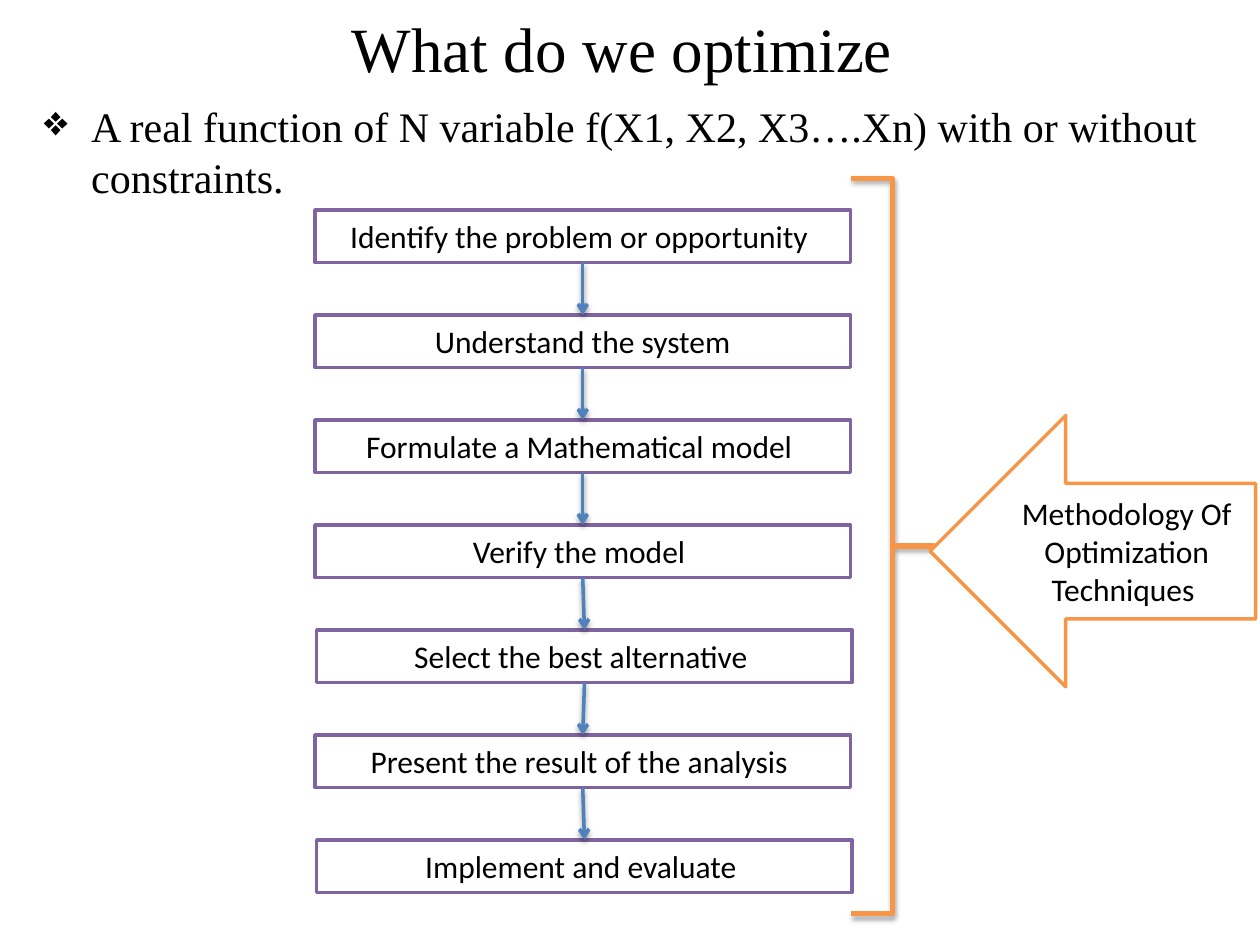
from dataclasses import dataclass

import lxml.etree
import pptx
import pptx.dml.color
import pptx.enum.shapes
import pptx.enum.text
import pptx.oxml.ns
import pptx.util

Pt = pptx.util.Pt
qn = pptx.oxml.ns.qn
SHAPE = pptx.enum.shapes.MSO_SHAPE
ALIGN = pptx.enum.text.PP_ALIGN
ANCHOR = pptx.enum.text.MSO_ANCHOR


@dataclass(frozen=True)
class Theme:
    text: str = "000000"
    surface: str = "FFFFFF"
    step: str = "8064A2"
    flow: str = "4F81BD"
    method: str = "F79646"
    heading_font: str = "Times New Roman"
    step_font: str = "Calibri"
    title_size: int = 36
    body_size: int = 24
    step_size: int = 18


THEME = Theme()

STEPS = [
    ("Identify the problem or opportunity ", 180),
    ("Understand the system", 180),
    ("Formulate a Mathematical model ", 180),
    ("Verify the model ", 180),
    ("Select the best alternative ", 181),
    ("Present the result of the analysis ", 180),
    ("Implement and evaluate ", 181),
]
STEP_TOP, STEP_PITCH, STEP_WIDTH, STEP_HEIGHT = 120, 60, 306, 30


def color(value):
    return pptx.dml.color.RGBColor.from_string(value)


def write_text(shape, text, *, font, size, align=ALIGN.CENTER, anchor=ANCHOR.MIDDLE):
    frame = shape.text_frame
    frame.word_wrap = True
    frame.vertical_anchor = anchor
    paragraph = frame.paragraphs[0]
    paragraph.alignment = align
    run = paragraph.add_run()
    run.text = text
    run.font.name = font
    run.font.size = Pt(size)
    run.font.color.rgb = color(THEME.text)
    return paragraph


def add_bullet(paragraph, character, indent):
    properties = paragraph._p.get_or_add_pPr()
    properties.set("marL", str(Pt(indent)))
    properties.set("indent", str(-Pt(indent)))
    lxml.etree.SubElement(properties, qn("a:buChar"), char=character)


def add_shadow(shape, opacity, distance):
    properties = shape.element.spPr
    effects = properties.find(qn("a:effectLst"))
    if effects is None:
        effects = lxml.etree.SubElement(properties, qn("a:effectLst"))
    shadow = lxml.etree.SubElement(
        effects, qn("a:outerShdw"), blurRad=str(Pt(3.1)), dist=str(Pt(distance)),
        dir="5400000", rotWithShape="0")
    tint = lxml.etree.SubElement(shadow, qn("a:srgbClr"), val=THEME.text)
    lxml.etree.SubElement(tint, qn("a:alpha"), val=str(opacity * 1000))


def add_text_box(slide, box, text, **text_format):
    shape = slide.shapes.add_textbox(*map(Pt, box))
    return write_text(shape, text, **text_format)


def add_outlined_shape(slide, kind, box, line_color, line_width=2, filled=True):
    shape = slide.shapes.add_shape(kind, *map(Pt, box))
    shape.shadow.inherit = False
    if filled:
        shape.fill.solid()
        shape.fill.fore_color.rgb = color(THEME.surface)
    else:
        shape.fill.background()
    shape.line.color.rgb = color(line_color)
    shape.line.width = Pt(line_width)
    return shape


def add_labeled_shape(slide, kind, box, line_color, text):
    shape = add_outlined_shape(slide, kind, box, line_color)
    write_text(shape, text, font=THEME.step_font, size=THEME.step_size)
    return shape


def add_flow_arrow(slide, upper, lower):
    connector = slide.shapes.add_connector(
        pptx.enum.shapes.MSO_CONNECTOR.STRAIGHT, 0, 0, 0, 0)
    connector.begin_connect(upper, 2)
    connector.end_connect(lower, 0)
    connector.line.color.rgb = color(THEME.flow)
    connector.line.width = Pt(2)
    line = connector.element.spPr.find(qn("a:ln"))
    lxml.etree.SubElement(line, qn("a:tailEnd"), type="arrow")
    add_shadow(connector, 38, 1.6)


def add_steps(slide):
    boxes = [
        add_labeled_shape(
            slide, SHAPE.RECTANGLE,
            (left, STEP_TOP + index * STEP_PITCH, STEP_WIDTH, STEP_HEIGHT),
            THEME.step, text)
        for index, (text, left) in enumerate(STEPS)
    ]
    for upper, lower in zip(boxes, boxes[1:]):
        add_flow_arrow(slide, upper, lower)


def add_methodology(slide):
    brace = add_outlined_shape(slide, SHAPE.RIGHT_BRACE, (486.5, 102, 47, 420),
                               THEME.method, line_width=3, filled=False)
    brace.adjustments[0] = 0
    brace.adjustments[1] = 0.5
    add_shadow(brace, 35, 1.8)
    add_labeled_shape(slide, SHAPE.LEFT_ARROW, (531.5, 237.5, 186, 155),
                      THEME.method, "Methodology Of Optimization Techniques ")


def main():
    presentation = pptx.Presentation()
    presentation.slide_width = Pt(720)
    presentation.slide_height = Pt(540)
    slide = presentation.slides.add_slide(presentation.slide_layouts[6])

    add_text_box(slide, (36, 0, 648, 54), "What do we optimize ",
                 font=THEME.heading_font, size=THEME.title_size)
    statement = add_text_box(
        slide, (18, 54, 702, 428),
        "A real function of N variable f(X1, X2, X3….Xn) with or without constraints.",
        font=THEME.heading_font, size=THEME.body_size,
        align=ALIGN.LEFT, anchor=ANCHOR.TOP)
    statement.space_before = Pt(4.8)
    add_bullet(statement, "❖", 27)

    add_steps(slide)
    add_methodology(slide)
    presentation.save("out.pptx")


if __name__ == "__main__":
    main()
